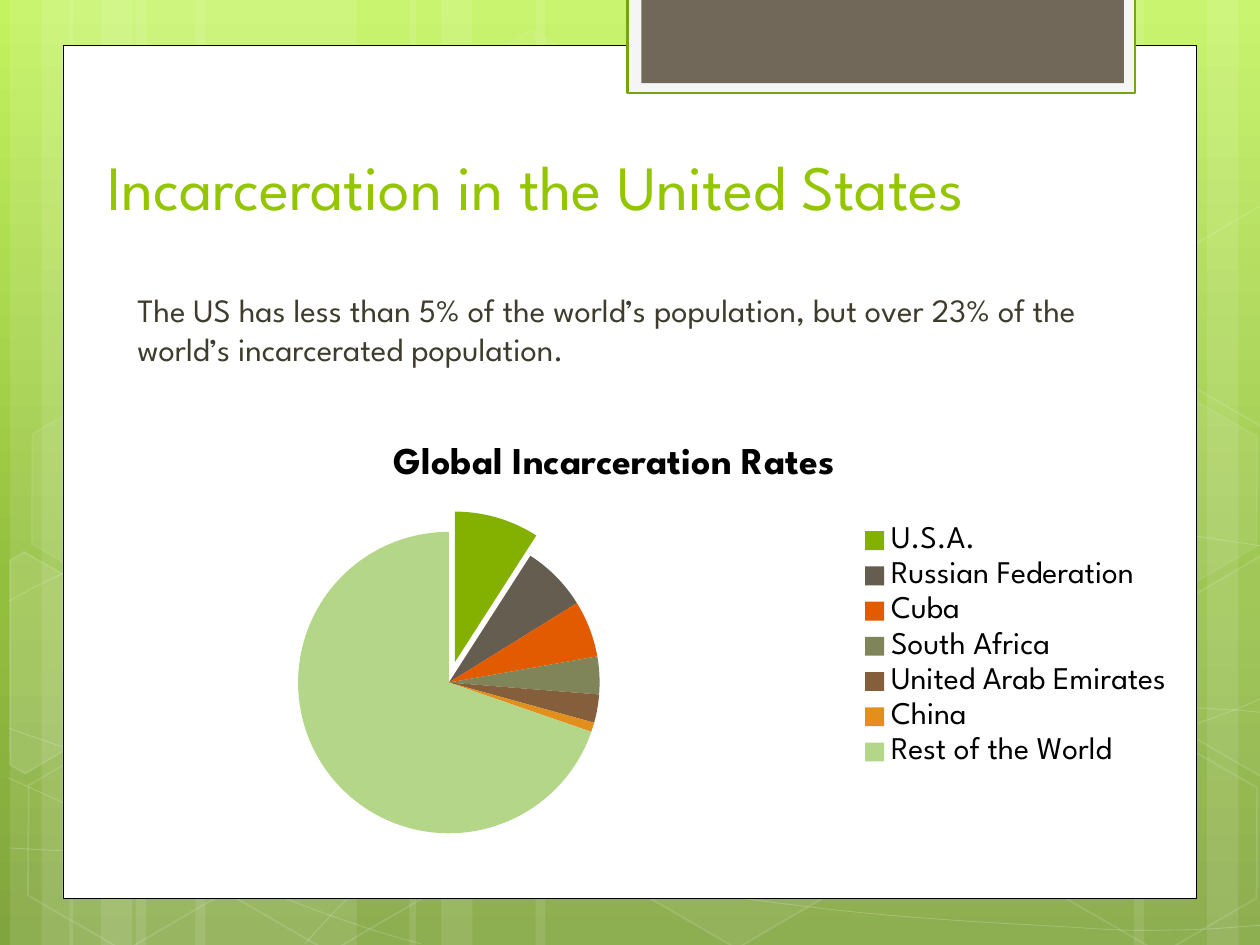
from lxml.etree import SubElement
from pptx import Presentation
from pptx.chart.data import CategoryChartData
from pptx.dml.color import RGBColor
from pptx.enum.chart import XL_CHART_TYPE as ChartType, XL_LEGEND_POSITION as LegendPosition
from pptx.enum.shapes import MSO_SHAPE as Preset
from pptx.enum.text import MSO_ANCHOR as Anchor, PP_ALIGN as Align
from pptx.oxml.ns import qn
from pptx.util import Pt

THEME = {
    "font": "League Spartan",
    "white": "FFFFFF", "black": "000000", "title": "94C600", "body": "3E3D2D",
    "tab": "71685A", "tab_frame": "F5F5F5", "tab_line": "74A510",
    "background": [(0, "C3F35F"), (62, "93BF3F"), (100, "81A53E")],
    "slices": ["84B000", "655D50", "E25B00", "808459", "855F3C", "E28F1D", "B4D688"],
    "title_size": 36, "body_size": 18.6, "chart_size": 18, "chart_title_size": 21.6,
}
COLUMNS, ROWS = 10, 7.5

presentation = Presentation()
presentation.slide_width, presentation.slide_height = 9144000, 6858000
slide = presentation.slides.add_slide(presentation.slide_layouts[5])
shapes = slide.shapes
COLUMN = presentation.slide_width / COLUMNS
ROW = presentation.slide_height / ROWS


def grid(*lengths):
    """Turn alternating column and row counts into slide lengths."""
    return [round(n * (ROW if i % 2 else COLUMN)) for i, n in enumerate(lengths)]


def paint(shape, fill=None, fill_alpha=100, line=None, width=1, line_alpha=100):
    shape.shadow.inherit = False
    for part, color, alpha in ((shape.fill, fill, fill_alpha), (shape.line.fill, line, line_alpha)):
        if color is None:
            part.background()
            continue
        part.solid()
        part.fore_color.rgb = RGBColor.from_string(color)
        if alpha < 100:
            owner = shape.line._ln if part is shape.line.fill else shape._element.spPr
            color_node = owner.find(qn("a:solidFill") + "/" + qn("a:srgbClr"))
            SubElement(color_node, qn("a:alpha"), val=str(alpha * 1000))
    if line:
        shape.line.width = Pt(width)


# Background gradient, top to bottom
background = slide.background.fill
background.gradient()
background.gradient_angle = 270
stops = slide._element.find(".//" + qn("a:gsLst"))
for stop in list(stops):
    stops.remove(stop)
for position, color in THEME["background"]:
    stop = SubElement(stops, qn("a:gs"), pos=str(position * 1000))
    SubElement(stop, qn("a:srgbClr"), val=color)

# Translucent full-height stripes: left, width
stripes = [(1.08, 1.75), (0.08, 0.5), (0.33, 0.83), (1.55, 1.75), (0.55, 0.5), (0.8, 0.83),
           (7.33, 1.75), (9.58, 0.5), (9, 0.83), (4.25, 3.08), (3.25, 0.5), (3.5, 0.83)]
for left, width in stripes:
    stripe = shapes.add_shape(Preset.RECTANGLE, *grid(left, 0, width, ROWS))
    paint(stripe, THEME["white"], 10)

# Sweeping lines: a start point, then three Bezier points per segment
sweeps = [
    [(0.07, 6.73), (0.61, 6.76), (1.15, 6.79), (1.9, 6.78), (2.65, 6.77), (3.58, 6.75),
     (4.58, 6.65), (5.58, 6.55), (7, 6.36), (7.92, 6.17), (8.83, 5.98), (9.77, 5.68), (10.07, 5.51)],
    [(0.07, 4.77), (0.36, 4.61), (0.65, 4.46), (1.21, 4.31), (1.78, 4.16), (2.59, 3.94),
     (3.47, 3.87), (4.36, 3.8), (5.44, 3.79), (6.54, 3.87), (7.64, 3.95), (9.47, 4.26), (10.07, 4.34)],
    [(0.06, 6.17), (1.27, 6.72), (2.47, 7.27), (3.34, 7.49)],
    [(0.07, 5.78), (0.38, 5.89), (0.7, 6), (1.28, 6.16), (1.86, 6.31), (2.73, 6.56),
     (3.57, 6.73), (4.4, 6.9), (5.45, 7.08), (6.28, 7.18), (7.11, 7.29), (8, 7.33),
     (8.53, 7.36), (9.05, 7.4), (9.19, 7.38), (9.45, 7.38), (9.71, 7.37), (9.89, 7.35), (10.07, 7.34)],
    [(2.42, 7.49), (2.6, 7.29), (2.78, 7.09), (3.02, 6.91), (3.26, 6.73), (3.6, 6.53),
     (3.88, 6.39), (4.16, 6.25), (4.33, 6.19), (4.7, 6.09), (5.06, 5.99), (5.73, 5.85),
     (6.08, 5.78), (6.44, 5.71), (6.49, 5.71), (6.8, 5.69), (7.11, 5.66), (7.6, 5.63),
     (7.94, 5.62), (8.29, 5.61), (8.86, 5.62), (8.86, 5.62), (8.86, 5.62), (9.53, 5.62),
     (9.53, 5.62), (9.71, 5.63), (9.88, 5.64), (9.97, 5.65), (10.06, 5.66), (10.03, 5.65), (10.06, 5.66)],
]
for sweep in sweeps:
    builder = shapes.build_freeform(*grid(*sweep[0]))
    builder.add_line_segments([grid(*anchor) for anchor in sweep[3::3]], close=False)
    curve = builder.convert_to_shape()
    # Bend each segment, except those whose handles lie on its ends
    for i, segment in enumerate(curve._element.findall(".//" + qn("a:lnTo"))):
        start, handle_1, handle_2, end = sweep[3 * i:3 * i + 4]
        if (handle_1, handle_2) == (start, end):
            continue
        segment.tag = qn("a:cubicBezTo")
        for n, handle in enumerate((handle_1, handle_2)):
            x, y = grid(*handle)
            point = SubElement(segment, qn("a:pt"), x=str(x - curve.left), y=str(y - curve.top))
            segment.insert(n, point)
    paint(curve, line=THEME["white"], width=0.5, line_alpha=20)

# Hexagons: left, top, fill opacity (0 is unfilled), line opacity
hexagons = [(3.34, 0.36, 4, 8), (4.97, 5.89, 6, 12), (0.11, 5.91, 0, 12), (0.14, 3.12, 7, 8),
            (1.74, 5.92, 0, 12), (7.53, 4.53, 10, 12), (8.34, 5.93, 0, 12), (8.34, 3.14, 7, 8)]
for left, top, fill_alpha, line_alpha in hexagons:
    hexagon = shapes.add_shape(Preset.HEXAGON, *grid(left, top, 1.75, 1.52))
    hexagon.rotation = 30
    hexagon.adjustments[0] = 0.285
    paint(hexagon, THEME["white"] if fill_alpha else None, fill_alpha, THEME["white"], 1, line_alpha)

# Hexagons cut off by the slide's edges: fill opacity, corners
cut_hexagons = [
    (10, [(0.08, 4.45), (0.19, 4.38), (0.96, 4.82), (0.95, 5.7), (0.2, 6.14), (0.08, 6.07)]),
    (4, [(9.26, 4.85), (10.01, 4.41), (10.09, 4.46), (10.09, 6.13), (10.02, 6.17), (9.26, 5.73)]),
    (0, [(9.26, 2.07), (10.01, 1.63), (10.1, 1.68), (10.09, 3.35), (10.02, 3.39), (9.26, 2.95)]),
]
for fill_alpha, corners in cut_hexagons:
    builder = shapes.build_freeform(*grid(*corners[0]))
    builder.add_line_segments([grid(*corner) for corner in corners[1:]], close=True)
    paint(builder.convert_to_shape(), THEME["white"] if fill_alpha else None, fill_alpha,
          THEME["white"], 1, 12)

# White panel and the framed tab at the top
panels = [((0.5, 0.36, 9, 6.77), "white", "black", 0.5),
          ((4.98, -0.02, 4.03, 0.76), "tab_frame", "tab_line", 1.25),
          ((5.09, -0.02, 3.83, 0.68), "tab", None, 0)]
for area, fill, line, width in panels:
    panel = shapes.add_shape(Preset.RECTANGLE, *grid(*area))
    paint(panel, THEME[fill], line=THEME.get(line), width=width)

# Title, lifted above the panel, and body text
title = shapes.title
shapes._spTree.append(title._element)
title.left, title.top, title.width, title.height = grid(0.75, 1.12, 8.5, 1.25)
body = shapes.add_textbox(*grid(0.92, 2.25, 8.25, 0.63))
texts = [
    (title, "title", "Incarceration in the United States"),
    (body, "body", "The US has less than 5% of the world’s population, "
                   "but over 23% of the world’s incarcerated population."),
]
for shape, role, text in texts:
    frame = shape.text_frame
    frame.text = text
    frame.word_wrap = True
    frame.vertical_anchor = Anchor.TOP
    paragraph = frame.paragraphs[0]
    paragraph.alignment = Align.LEFT
    paragraph.font.name = THEME["font"]
    paragraph.font.size = Pt(THEME[role + "_size"])
    paragraph.font.color.rgb = RGBColor.from_string(THEME[role])
body.text_frame.margin_left = round(0.17 * COLUMN)

# Pie chart with the first slice pulled out
rates = {"U.S.A.": 9, "Russian Federation": 7, "Cuba": 6, "South Africa": 4,
         "United Arab Emirates": 3, "China": 1, "Rest of the World": 69}
chart_data = CategoryChartData()
chart_data.categories = list(rates)
chart_data.add_series("Global Incarceration Rates", list(rates.values()))
chart = shapes.add_chart(ChartType.PIE, *grid(0.34, 3.34, 9.08, 3.58), chart_data).chart
chart.font.name = THEME["font"]
chart.font.size = Pt(THEME["chart_size"])
chart.font.color.rgb = RGBColor.from_string(THEME["black"])

chart.has_title = True
chart.chart_title.text_frame.text = "Global Incarceration Rates"
heading = chart.chart_title.text_frame.paragraphs[0]
heading.font.name = THEME["font"]
heading.font.size = Pt(THEME["chart_title_size"])
heading.font.bold = True
heading.font.color.rgb = RGBColor.from_string(THEME["black"])

chart.has_legend = True
chart.legend.position = LegendPosition.RIGHT
chart.legend.include_in_layout = False

plot = chart.plots[0]
plot.vary_by_categories = True
series = plot.series[0]
for i, color in enumerate(THEME["slices"]):
    point_fill = series.points[i].format.fill
    point_fill.solid()
    point_fill.fore_color.rgb = RGBColor.from_string(color)
first_point = series._element.find(qn("c:dPt"))
explosion = SubElement(first_point, qn("c:explosion"), val="14")
first_point.find(qn("c:spPr")).addprevious(explosion)

presentation.save("out.pptx")
